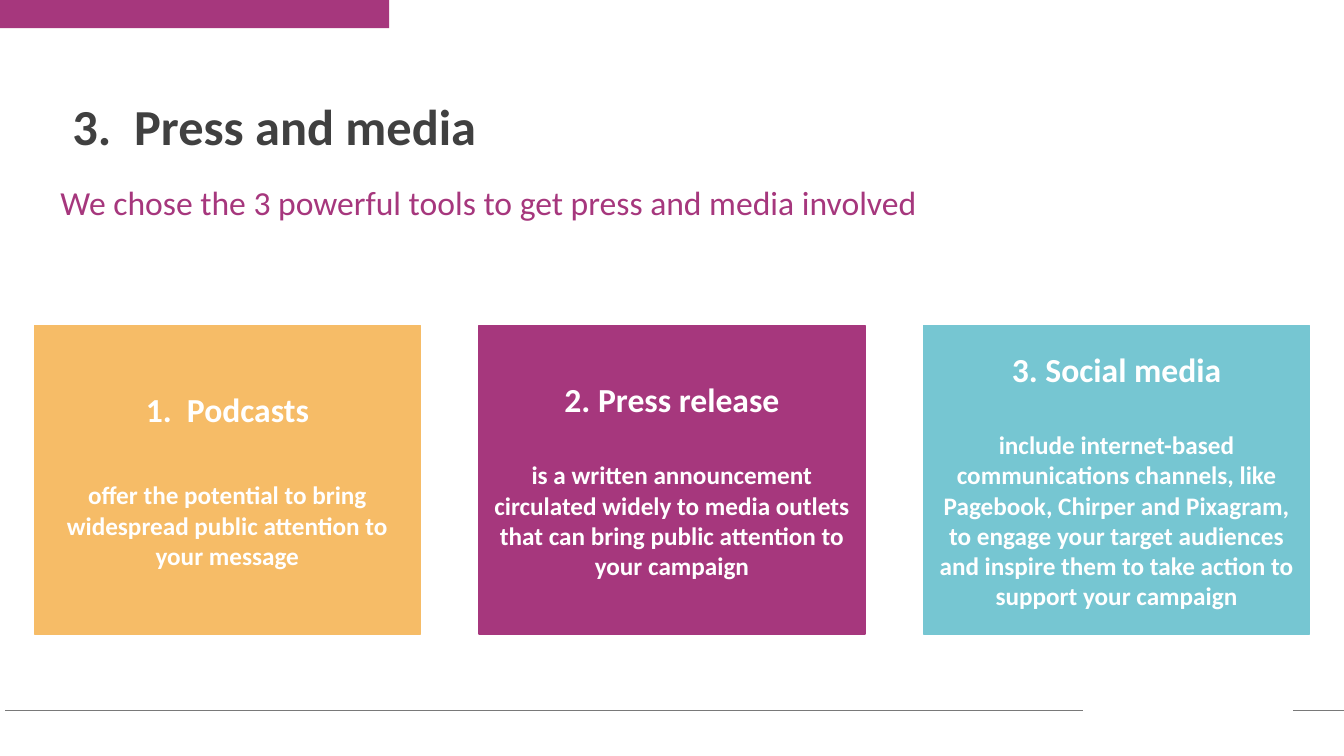
from dataclasses import dataclass

import pptx
import pptx.dml.color
import pptx.enum.shapes
import pptx.enum.text
import pptx.oxml.ns
import pptx.util
from lxml import etree
from pptx.util import Inches

COLORS = {
    "plum": "A6377D",
    "amber": "F6BC67",
    "aqua": "76C6D2",
    "ink": "404040",
    "rule": "797979",
    "white": "FFFFFF",
}
FONT = "Calibri"


@dataclass
class Heading:
    text: str
    left: float
    top: float
    width: float
    height: float
    size: int
    color: str
    bold: bool


@dataclass
class Card:
    title: str
    body: list[str]
    color: str
    gap: int  # points between title and body


HEADINGS = [
    Heading("3.  Press and media", 0.62, 0.96, 5.74, 0.8, 36, "ink", True),
    Heading("We chose the 3 powerful tools to get press and media involved",
            0.5, 1.8, 11.15, 1.1, 24, "plum", False),
]
CARDS = [
    Card("1.  Podcasts",
         ["offer the potential to bring widespread public attention to your message"],
         "amber", 36),
    Card("2. Press release",
         ["is a written announcement",
          "circulated widely to media outlets that can bring public attention "
          "to your campaign"],
         "plum", 29),
    Card("3. Social media",
         ["include internet-based",
          "communications channels, like Pagebook, Chirper and Pixagram, to engage "
          "your target audiences and inspire them to take action to support your campaign"],
         "aqua", 29),
]
CARD_LEFT, CARD_TOP, CARD_STEP = 0.34, 3.23, 4.41
CARD_WIDTH, CARD_HEIGHT = 3.83, 3.06
RULE_TOP = 7.05
RULES = [(10.74, 0.05), (13.33, 12.82)]


def rgb(name: str) -> pptx.dml.color.RGBColor:
    return pptx.dml.color.RGBColor.from_string(COLORS[name])


def set_font(para, size: int, color: str, bold: bool) -> None:
    para.font.name = FONT
    para.font.size = pptx.util.Pt(size)
    para.font.bold = bold
    para.font.color.rgb = rgb(color)


def add_block(page, left: float, top: float, width: float, height: float, color: str):
    block = page.shapes.add_shape(
        pptx.enum.shapes.MSO_SHAPE.RECTANGLE,
        Inches(left), Inches(top), Inches(width), Inches(height))
    block.shadow.inherit = False
    block.fill.solid()
    block.fill.fore_color.rgb = rgb(color)
    block.line.fill.background()
    return block


def add_rule(page, start: float, end: float) -> None:
    rule = page.shapes.add_connector(
        pptx.enum.shapes.MSO_CONNECTOR.STRAIGHT,
        Inches(start), Inches(RULE_TOP), Inches(end), Inches(RULE_TOP))
    rule.line.color.rgb = rgb("rule")
    rule.line.width = pptx.util.Pt(0.5)
    etree.SubElement(rule._element.spPr, pptx.oxml.ns.qn("a:effectLst"))


def add_heading(page, heading: Heading) -> None:
    box = page.shapes.add_textbox(Inches(heading.left), Inches(heading.top),
                                  Inches(heading.width), Inches(heading.height))
    box.text_frame.word_wrap = True
    para = box.text_frame.paragraphs[0]
    para.text = heading.text
    para.line_spacing = 0.9
    set_font(para, heading.size, heading.color, heading.bold)


def add_card(page, card: Card, left: float) -> None:
    block = add_block(page, left, CARD_TOP, CARD_WIDTH, CARD_HEIGHT, card.color)
    block.line.color.rgb = rgb(card.color)
    block.line.width = pptx.util.Pt(1)
    frame = block.text_frame
    frame.word_wrap = True
    frame.vertical_anchor = pptx.enum.text.MSO_ANCHOR.MIDDLE
    frame.text = "\n".join([card.title, *card.body])
    for index, para in enumerate(frame.paragraphs):
        para.alignment = pptx.enum.text.PP_ALIGN.CENTER
        set_font(para, 18 if index else 24, "white", True)
    frame.paragraphs[1].space_before = pptx.util.Pt(card.gap)


def main() -> None:
    deck = pptx.Presentation()
    deck.slide_width, deck.slide_height = Inches(13.33), Inches(7.5)
    page = deck.slides.add_slide(deck.slide_layouts[6])

    # Top band and footer rules
    add_block(page, 0, 0, 3.86, 0.28, "plum")
    for start, end in RULES:
        add_rule(page, start, end)

    # Title and subtitle
    for heading in HEADINGS:
        add_heading(page, heading)

    # Row of tool cards
    for index, card in enumerate(CARDS):
        add_card(page, card, CARD_LEFT + index * CARD_STEP)

    deck.save("out.pptx")


if __name__ == "__main__":
    main()
